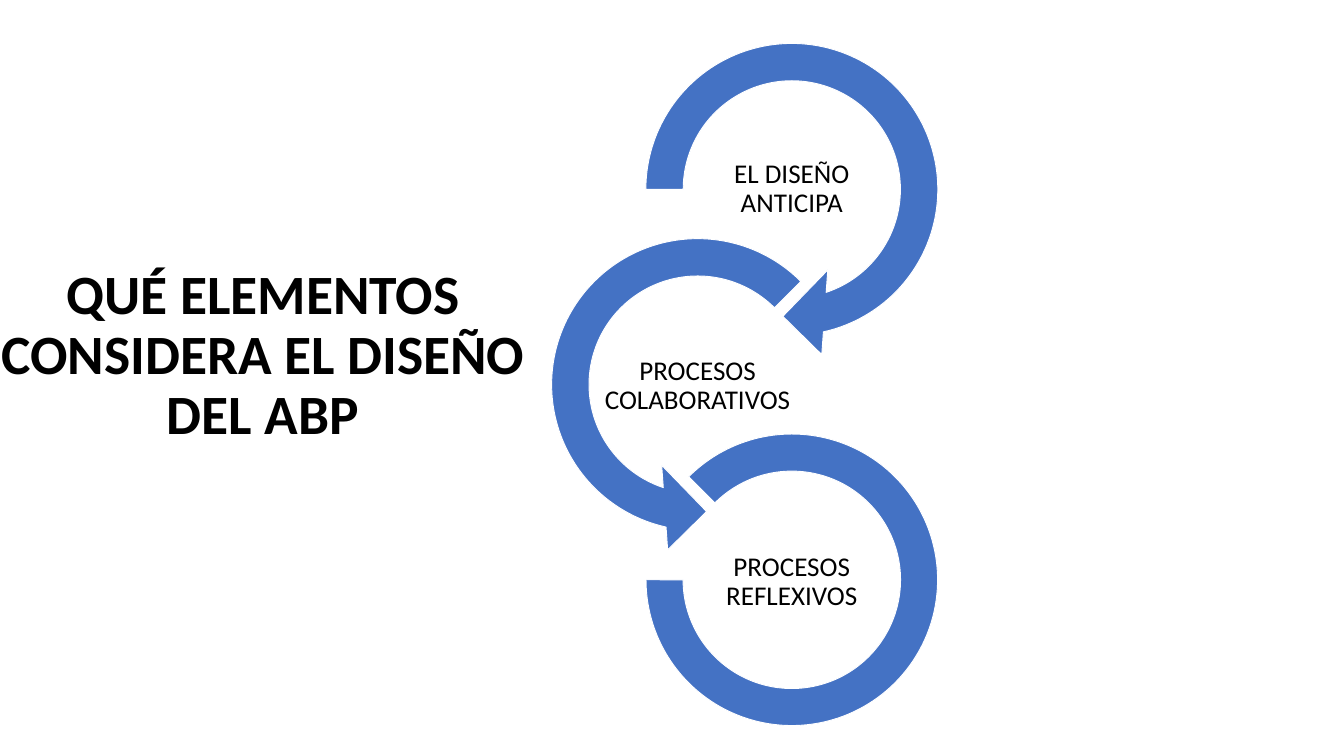
from pptx import Presentation
from pptx.dml.color import RGBColor
from pptx.enum.shapes import MSO_SHAPE
from pptx.enum.text import MSO_ANCHOR, PP_ALIGN
from pptx.util import Cm, Pt

CENTER, MIDDLE = PP_ALIGN.CENTER, MSO_ANCHOR.MIDDLE
ARROW, LEFT_ARROW, ARC = (MSO_SHAPE.CIRCULAR_ARROW,
                          MSO_SHAPE.LEFT_CIRCULAR_ARROW, MSO_SHAPE.BLOCK_ARC)
COLORS = {"ring": "4472C4", "edge": "FFFFFF", "text": "000000"}
FONT = "Calibri"

# Content
TITLE = "QUÉ ELEMENTOS CONSIDERA EL DISEÑO DEL ABP"
# label, shape, size (cm), centre x (cm), adjustments
STEPS = [
    ("EL DISEÑO ANTICIPA", ARROW, 12.83, 29.93, (0.11, 11.42, 45, 108, 0.125)),
    ("PROCESOS COLABORATIVOS", LEFT_ARROW, 12.83, 26.37, (0.11, 11.42, 63, 189, 0.125)),
    ("PROCESOS REFLEXIVOS", ARC, 11.02, 29.93, (135, 108, 0.127)),
]

# Layout in cm
TOP_Y, RING_PITCH, LABEL_PITCH = 7.16, 7.38, 7.43
LABEL_W, LABEL_H = 7.14, 3.56


def color(name):
    return RGBColor.from_string(COLORS[name])


def box(cx, cy, w, h):
    return Cm(cx - w / 2), Cm(cy - h / 2), Cm(w), Cm(h)


def write(shape, text, size, bold=False):
    tf = shape.text_frame
    tf.text = text
    tf.word_wrap = True
    tf.vertical_anchor = MIDDLE
    p = tf.paragraphs[0]
    p.alignment = CENTER
    p.line_spacing = 0.9
    font = p.runs[0].font
    font.name, font.size, font.bold = FONT, Pt(size), bold
    font.color.rgb = color("text")
    return tf


def add_ring(slide, kind, size, cx, cy, adjustments):
    s = slide.shapes.add_shape(kind, *box(cx, cy, size, size))
    for i, value in enumerate(adjustments):
        s.adjustments[i] = value
    s.shadow.inherit = False
    s.fill.solid()
    s.fill.fore_color.rgb = color("ring")
    s.line.color.rgb = color("edge")
    s.line.width = Pt(1)


def add_label(slide, text, cx, cy):
    s = slide.shapes.add_textbox(*box(cx, cy, LABEL_W, LABEL_H))
    tf = write(s, text, 29)
    tf.margin_left = tf.margin_right = tf.margin_top = tf.margin_bottom = Cm(0.05)


def main():
    prs = Presentation()
    prs.slide_width, prs.slide_height = Cm(50.8), Cm(28.58)
    slide = prs.slides.add_slide(prs.slide_layouts[5])

    # Title, raised by a deep bottom margin
    title = slide.shapes.title
    title.left, title.top, title.width, title.height = Cm(-1.07), Cm(11.96), Cm(22.02), Cm(5.51)
    tf = write(title, TITLE, 59.4, bold=True)
    tf.margin_bottom = Cm(2.62)

    # Chain of rings with their labels
    for i, (label, kind, size, cx, adjustments) in enumerate(STEPS):
        add_ring(slide, kind, size, cx, TOP_Y + i * RING_PITCH, adjustments)
        add_label(slide, label, cx, TOP_Y + i * LABEL_PITCH)

    prs.save("out.pptx")


if __name__ == "__main__":
    main()
